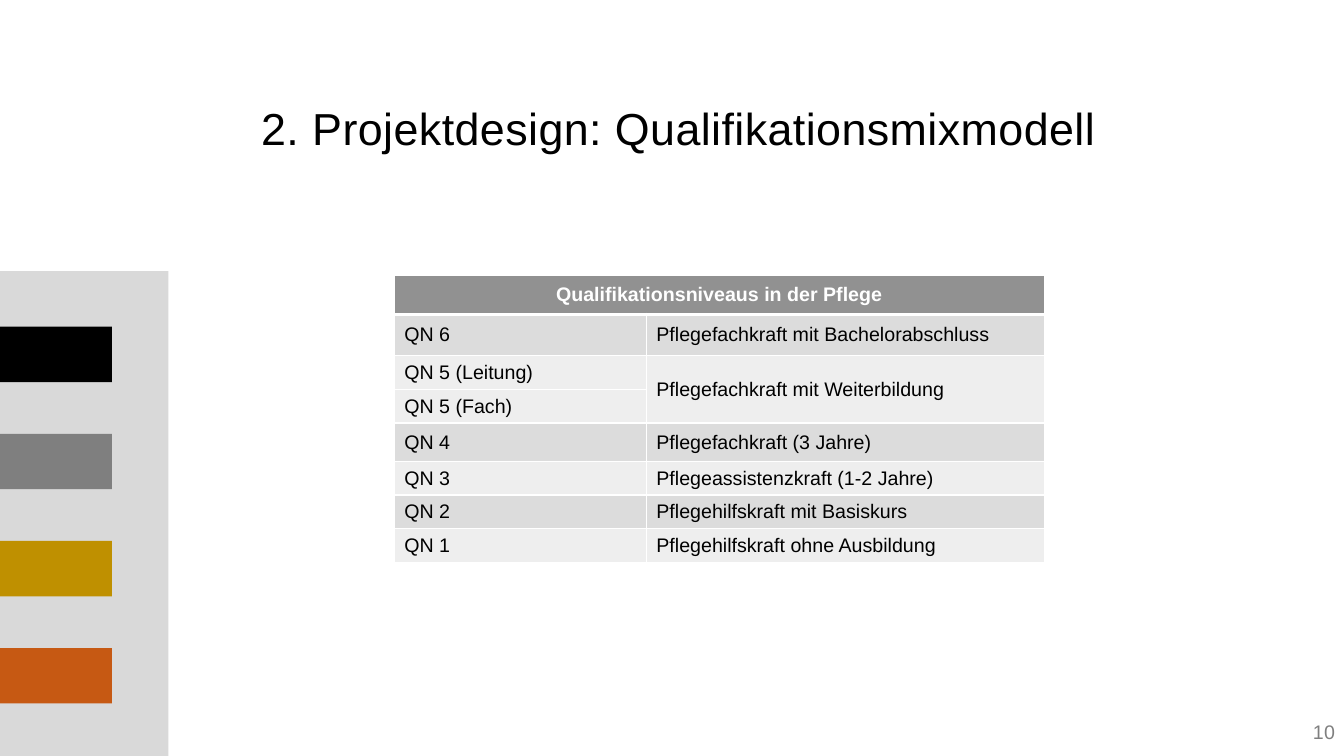
from dataclasses import dataclass

from lxml import etree
from pptx import Presentation
from pptx.dml.color import RGBColor
from pptx.enum.shapes import MSO_SHAPE
from pptx.enum.text import MSO_ANCHOR, MSO_AUTO_SIZE, PP_ALIGN
from pptx.oxml.ns import qn
from pptx.util import Inches, Pt

RECTANGLE = MSO_SHAPE.RECTANGLE
MIDDLE = MSO_ANCHOR.MIDDLE
NO_AUTOFIT = MSO_AUTO_SIZE.NONE
LEFT, CENTER, RIGHT = PP_ALIGN.LEFT, PP_ALIGN.CENTER, PP_ALIGN.RIGHT

BLACK = RGBColor(0x00, 0x00, 0x00)
WHITE = RGBColor(0xFF, 0xFF, 0xFF)
GRAY = RGBColor(0x7F, 0x7F, 0x7F)
GOLD = RGBColor(0xBF, 0x90, 0x00)
ORANGE = RGBColor(0xC6, 0x59, 0x13)
PANEL_GRAY = RGBColor(0xD9, 0xD9, 0xD9)
HEADER_GRAY = RGBColor(0x91, 0x91, 0x91)
BAND_DARK = RGBColor(0xDC, 0xDC, 0xDC)
BAND_LIGHT = RGBColor(0xEE, 0xEE, 0xEE)

FONT = "Arial"
BAR_TOP, BAR_PITCH = 3.24, 1.063


@dataclass(frozen=True)
class LevelRow:
    level: str
    description: str
    height: float
    fill: RGBColor


HEADER = LevelRow("Qualifikationsniveaus in der Pflege", "", 0.39, HEADER_GRAY)
LEVELS = [
    LevelRow("QN 6", "Pflegefachkraft mit Bachelorabschluss", 0.41, BAND_DARK),
    LevelRow("QN 5 (Leitung)", "Pflegefachkraft mit Weiterbildung", 0.32, BAND_LIGHT),
    LevelRow("QN 5 (Fach)", "", 0.32, BAND_LIGHT),
    LevelRow("QN 4", "Pflegefachkraft (3 Jahre)", 0.38, BAND_DARK),
    LevelRow("QN 3", "Pflegeassistenzkraft (1-2 Jahre)", 0.32, BAND_LIGHT),
    LevelRow("QN 2", "Pflegehilfskraft mit Basiskurs", 0.32, BAND_DARK),
    LevelRow("QN 1", "Pflegehilfskraft ohne Ausbildung", 0.32, BAND_LIGHT),
]
COLUMN_WIDTHS = [2.5, 3.95]


def add_rectangle(slide, left: float, top: float, width: float, height: float,
                  color: RGBColor) -> None:
    shape = slide.shapes.add_shape(RECTANGLE, Inches(left), Inches(top),
                                   Inches(width), Inches(height))
    shape.shadow.inherit = False
    shape.fill.solid()
    shape.fill.fore_color.rgb = color
    shape.line.fill.background()


def write_text(text_frame, text: str, size: float, color: RGBColor,
               alignment=LEFT, bold: bool = False, spacing: float = 0) -> None:
    text_frame.text = text
    paragraph = text_frame.paragraphs[0]
    paragraph.alignment = alignment
    for run in paragraph.runs:
        font = run.font
        font.name, font.size, font.bold = FONT, Pt(size), bold
        font.color.rgb = color
        if spacing:
            run._r.get_or_add_rPr().set("spc", str(round(spacing * 100)))


def set_borders(cell, bottom_width: float) -> None:
    properties = cell._tc.get_or_add_tcPr()
    widths = {"a:lnL": 1, "a:lnR": 1, "a:lnT": 1, "a:lnB": bottom_width}
    for tag, width in widths.items():
        line = etree.SubElement(properties, qn(tag), w=str(Pt(width)))
        fill = etree.SubElement(line, qn("a:solidFill"))
        etree.SubElement(fill, qn("a:srgbClr"), val=str(WHITE))


def add_level_table(slide) -> None:
    rows = [HEADER, *LEVELS]
    frame = slide.shapes.add_table(
        len(rows), len(COLUMN_WIDTHS), Inches(3.91), Inches(2.73),
        Inches(sum(COLUMN_WIDTHS)), Inches(sum(row.height for row in rows)))
    table = frame.table
    for column, width in zip(table.columns, COLUMN_WIDTHS):
        column.width = Inches(width)

    for row_index, row in enumerate(rows):
        is_header = row is HEADER
        table.rows[row_index].height = Inches(row.height)
        for column_index, text in enumerate((row.level, row.description)):
            cell = table.cell(row_index, column_index)
            set_borders(cell, 3 if is_header else 1)
            cell.fill.solid()
            cell.fill.fore_color.rgb = row.fill
            cell.vertical_anchor = MIDDLE
            write_text(cell.text_frame, text, 14, WHITE if is_header else BLACK,
                       CENTER if is_header else LEFT, bold=is_header)

    # The header spans both columns, the QN 5 description both QN 5 rows
    table.cell(0, 0).merge(table.cell(0, 1))
    table.cell(2, 1).merge(table.cell(3, 1))


def add_title(slide) -> None:
    title = slide.shapes.title
    title.left, title.top = Inches(2.49), Inches(0.92)
    title.width, title.height = Inches(10.47), Inches(0.7)
    text_frame = title.text_frame
    text_frame.word_wrap = True
    text_frame.auto_size = NO_AUTOFIT
    text_frame.vertical_anchor = MIDDLE
    write_text(text_frame, "2. Projektdesign: Qualifikationsmixmodell", 32, BLACK,
               spacing=0.3)


def add_page_number(slide) -> None:
    box = slide.shapes.add_textbox(Inches(12.22), Inches(7.21),
                                   Inches(1.02), Inches(0.21))
    text_frame = box.text_frame
    text_frame.word_wrap = True
    text_frame.margin_left = text_frame.margin_right = 0
    text_frame.margin_top = text_frame.margin_bottom = 0
    write_text(text_frame, "10", 14, GRAY, RIGHT, spacing=0.2)
    text_frame.paragraphs[0].line_spacing = Pt(12)


def main() -> None:
    presentation = Presentation()
    presentation.slide_width = Inches(13.33)
    presentation.slide_height = Inches(7.5)
    slide = presentation.slides.add_slide(presentation.slide_layouts[5])

    # Side panel with colour bars
    add_rectangle(slide, 0, 2.69, 1.67, 4.81, PANEL_GRAY)
    for index, color in enumerate((BLACK, GRAY, GOLD, ORANGE)):
        add_rectangle(slide, 0, BAR_TOP + index * BAR_PITCH, 1.11, 0.55, color)

    # Content
    add_page_number(slide)
    add_level_table(slide)
    add_title(slide)
    presentation.save("out.pptx")


if __name__ == "__main__":
    main()
